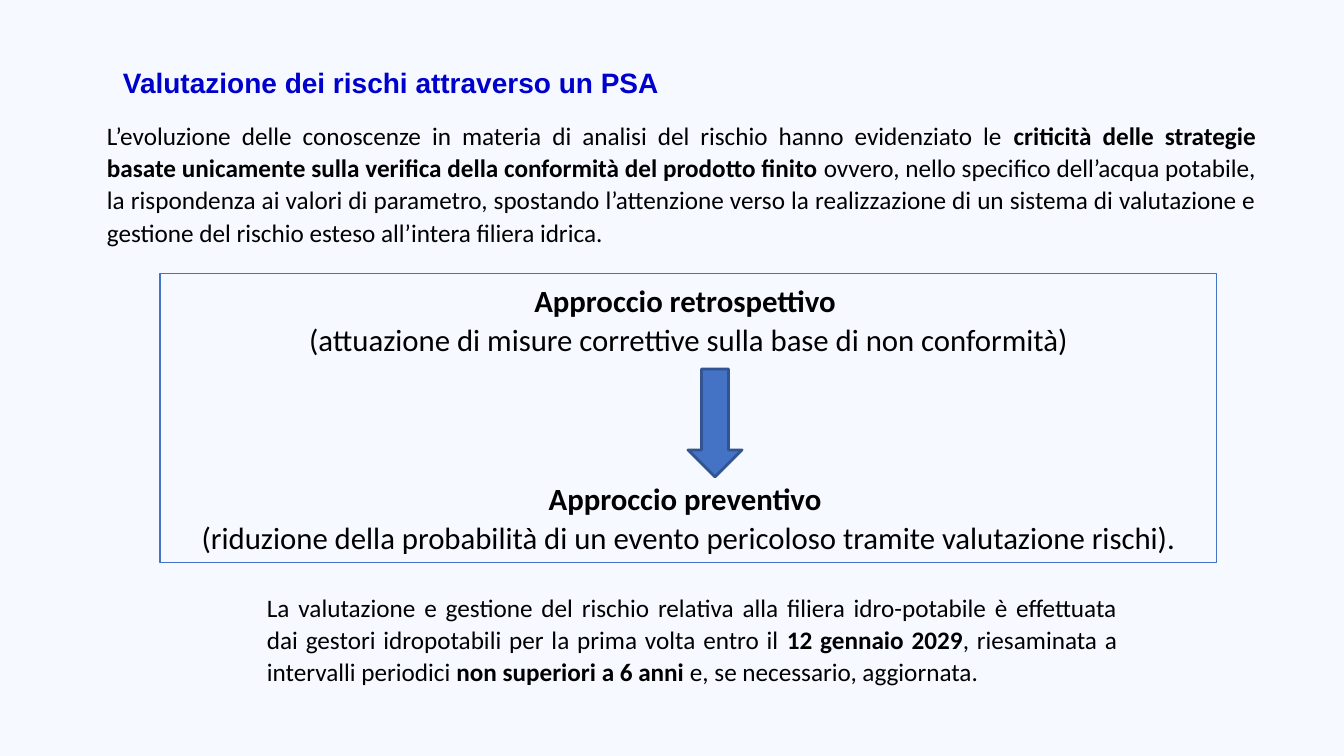
import pptx
import pptx.util
import pptx.dml.color
import pptx.enum.shapes
import pptx.enum.text

PX = 914400 / 100.8
COLORS = {
    "background": "F6F9FF",
    "title": "0000CC",
    "text": "000000",
    "accent": "4472C4",
    "arrow_line": "325491",
}
ALIGN = pptx.enum.text.PP_ALIGN
SHAPES = pptx.enum.shapes.MSO_SHAPE
BODY = {"name": "Calibri", "size": pptx.util.Pt(18)}
APPROACH = {"name": "Calibri", "size": pptx.util.Pt(22)}
TITLE = {"name": "Arial", "size": pptx.util.Pt(20)}
JUSTIFIED = {"alignment": ALIGN.JUSTIFY, "line_spacing": 1.07}
CENTERED = {"alignment": ALIGN.CENTER, "line_spacing": 1.07}


def emu(box):
    return [round(value * PX) for value in box]


def color(name):
    return pptx.dml.color.RGBColor.from_string(COLORS[name])


def apply(target, values):
    for name, value in values.items():
        setattr(target, name, value)


def write_paragraph(paragraph, runs, font, layout, color_name="text"):
    apply(paragraph, layout)
    for text, bold in runs:
        run = paragraph.add_run()
        run.text = text
        apply(run.font, {**font, "bold": bold})
        run.font.color.rgb = color(color_name)


def add_text(slide, box, runs, font, layout, color_name="text"):
    frame = slide.shapes.add_textbox(*emu(box)).text_frame
    frame.word_wrap = True
    write_paragraph(frame.paragraphs[0], runs, font, layout, color_name)


def add_preset(slide, kind, box, line_color, line_width):
    shape = slide.shapes.add_shape(kind, *emu(box))
    shape.shadow.inherit = False
    shape.line.color.rgb = color(line_color)
    shape.line.width = pptx.util.Pt(line_width)
    return shape


def add_approaches(slide, box):
    left, top, width, height = box
    arrow = add_preset(slide, SHAPES.DOWN_ARROW, (left + 528, top + 95, 54, 108), "arrow_line", 2)
    arrow.fill.solid()
    arrow.fill.fore_color.rgb = color("accent")

    panel = add_preset(slide, SHAPES.RECTANGLE, box, "accent", 0.75)
    panel.fill.background()
    frame = panel.text_frame
    apply(frame, {"word_wrap": True, "vertical_anchor": pptx.enum.text.MSO_ANCHOR.TOP})
    lines = [
        ("Approccio retrospettivo ", True, 0),
        ("(attuazione di misure correttive sulla base di non conformità)", False, 0),
        ("Approccio preventivo ", True, 85),
        ("(riduzione della probabilità di un evento pericoloso tramite valutazione rischi).", False, 0),
    ]
    for index, (text, bold, gap) in enumerate(lines):
        paragraph = frame.add_paragraph() if index else frame.paragraphs[0]
        layout = {**CENTERED, "space_before": pptx.util.Pt(gap)}
        write_paragraph(paragraph, [(text, bold)], APPROACH, layout)


def build_slide(presentation):
    slide = presentation.slides.add_slide(presentation.slide_layouts[6])
    slide.background.fill.solid()
    slide.background.fill.fore_color.rgb = color("background")

    add_text(slide, (113, 61, 576, 44), [("Valutazione dei rischi attraverso un PSA", True)],
             TITLE, {"alignment": ALIGN.LEFT}, "title")
    add_text(slide, (97, 113, 1169, 141), [
        ("L’evoluzione delle conoscenze in materia di analisi del rischio hanno evidenziato le ", False),
        ("criticità delle strategie basate unicamente sulla verifica della conformità "
         "del prodotto finito", True),
        (" ovvero, nello specifico dell’acqua potabile, la rispondenza ai valori di parametro, "
         "spostando l’attenzione verso la realizzazione di un sistema di valutazione e gestione "
         "del rischio esteso all’intera filiera idrica.", False),
    ], BODY, JUSTIFIED)
    add_approaches(slide, (160, 274, 1057, 289))
    add_text(slide, (257, 585, 870, 108), [
        ("La valutazione e gestione del rischio relativa alla filiera idro-potabile è effettuata "
         "dai gestori idropotabili per la prima volta entro il ", False),
        ("12 gennaio 2029", True),
        (", riesaminata a intervalli periodici ", False),
        ("non superiori a 6 anni ", True),
        ("e, se necessario, aggiornata.", False),
    ], BODY, JUSTIFIED)


def main():
    presentation = pptx.Presentation()
    presentation.slide_width, presentation.slide_height = emu((1344, 756))
    build_slide(presentation)
    presentation.save("out.pptx")


if __name__ == "__main__":
    main()
